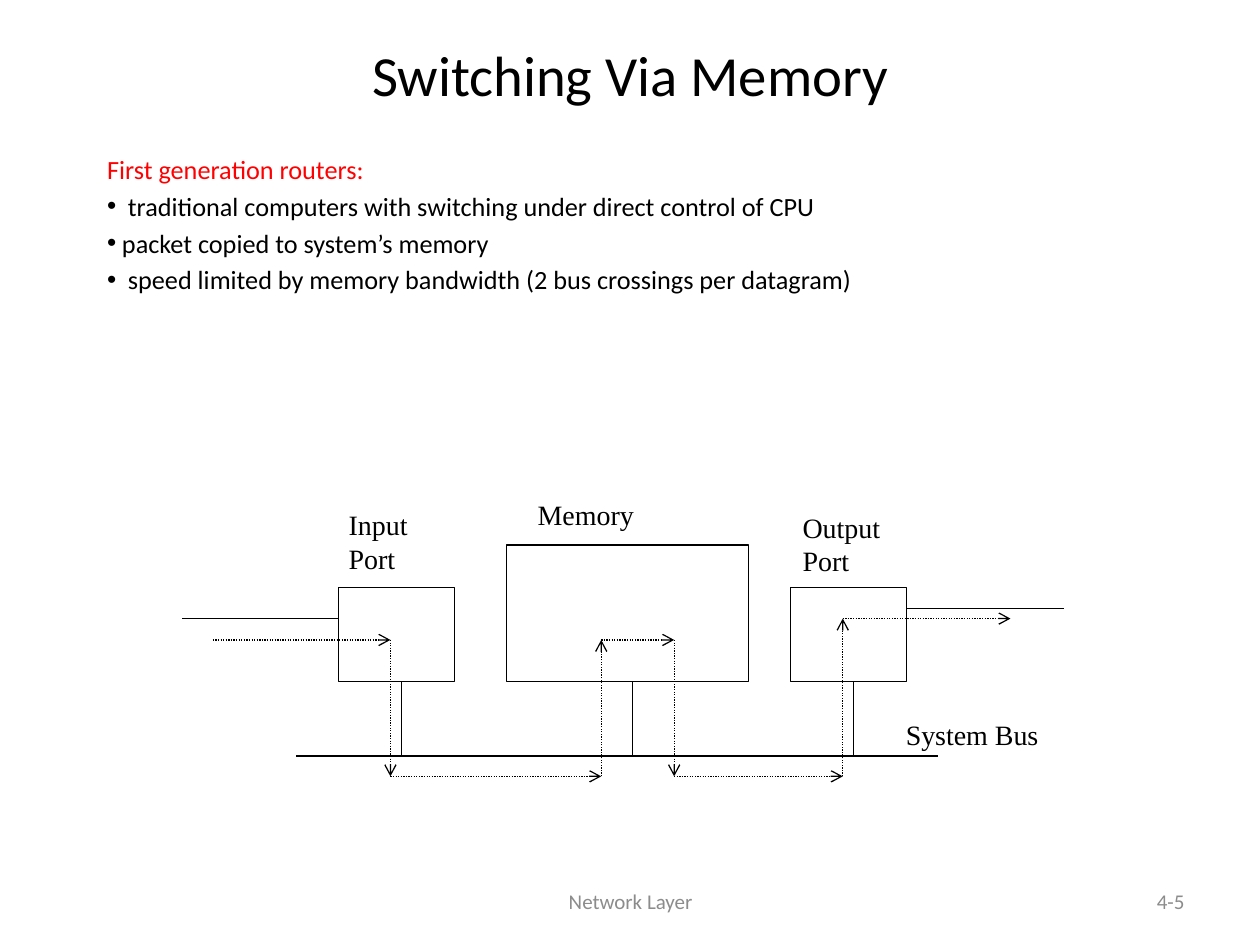
import itertools

import pptx
import pptx.dml.color
import pptx.enum.dml
import pptx.enum.shapes
import pptx.enum.text
import pptx.oxml.ns
import pptx.util
from lxml import etree

Cm = pptx.util.Cm
Pt = pptx.util.Pt
RGBColor = pptx.dml.color.RGBColor
Align = pptx.enum.text.PP_ALIGN
Anchor = pptx.enum.text.MSO_ANCHOR

BLACK = RGBColor(0x00, 0x00, 0x00)
RED = RGBColor(0xFF, 0x00, 0x00)
GREY = RGBColor(0x8C, 0x8C, 0x8C)
SANS = "Calibri"
SERIF = "Times New Roman"

BOX_BOTTOM = 13.74
BUS_Y = 15.24
PORT_WIDTH, PORT_HEIGHT = 2.34, 1.9
INPUT_LEFT, OUTPUT_LEFT = 6.83, 15.93
MEMORY_LEFT, MEMORY_WIDTH, MEMORY_HEIGHT = 10.21, 4.88, 2.75

POINTS = [
    " traditional computers with switching under direct control of CPU",
    "packet copied to system’s memory",
    " speed limited by memory bandwidth (2 bus crossings per datagram)",
]
LABELS = [
    (["Input", "Port"], 6.78, 10.11, 1.7, 1.63),
    (["Output", "Port"], 15.93, 10.16, 2.08, 1.63),
    (["Memory"], 10.59, 9.91, 2.46, 0.94),
    (["System Bus"], 18.01, 14.35, 3.2, 0.94),
]
PACKET_ROUTE = [
    (4.29, 12.9), (7.87, 12.9), (7.87, 15.65), (12.12, 15.65), (12.12, 12.9),
    (13.59, 12.9), (13.59, 15.65), (16.99, 15.65), (16.99, 12.47), (20.37, 12.47),
]


def add_frame(page, left, top, width, height, anchor=Anchor.TOP, wrap=True):
    box = page.shapes.add_textbox(Cm(left), Cm(top), Cm(width), Cm(height))
    frame = box.text_frame
    frame.word_wrap = wrap
    frame.vertical_anchor = anchor
    return frame


def add_span(para, text, size, font, color):
    span = para.add_run()
    span.text = text
    span.font.size = Pt(size)
    span.font.name = font
    span.font.color.rgb = color


def add_line_of_text(page, text, place, size, color, align):
    para = add_frame(page, *place, anchor=Anchor.MIDDLE).paragraphs[0]
    para.alignment = align
    add_span(para, text, size, SANS, color)


def add_bullet(para):
    """Give the paragraph a hanging bullet."""
    properties = para._p.get_or_add_pPr()
    properties.set("marL", str(Cm(0.3)))
    properties.set("indent", str(-Cm(0.3)))
    font = etree.SubElement(properties, pptx.oxml.ns.qn("a:buFont"))
    font.set("typeface", "Arial")
    mark = etree.SubElement(properties, pptx.oxml.ns.qn("a:buChar"))
    mark.set("char", "•")


def add_body(page):
    frame = add_frame(page, 1.91, 2.97, 21.79, 2.97)
    add_span(frame.paragraphs[0], "First generation routers:", 15, SANS, RED)
    for point in POINTS:
        para = frame.add_paragraph()
        para.space_before = Pt(3)
        add_bullet(para)
        add_span(para, point, 15, SANS, BLACK)


def add_label(page, lines, *place):
    frame = add_frame(page, *place, wrap=False)
    frame.auto_size = pptx.enum.text.MSO_AUTO_SIZE.SHAPE_TO_FIT_TEXT
    for index, text in enumerate(lines):
        para = frame.add_paragraph() if index else frame.paragraphs[0]
        add_span(para, text, 16, SERIF, BLACK)


def add_unit(page, left, width, height):
    """Draw a box that stands on the common lower edge."""
    box = page.shapes.add_shape(
        pptx.enum.shapes.MSO_SHAPE.RECTANGLE,
        Cm(left), Cm(BOX_BOTTOM - height), Cm(width), Cm(height))
    box.shadow.inherit = False
    box.fill.background()
    box.line.color.rgb = BLACK
    box.line.width = Pt(0.75)


def add_line(page, start, end):
    line = page.shapes.add_connector(
        pptx.enum.shapes.MSO_CONNECTOR.STRAIGHT,
        Cm(start[0]), Cm(start[1]), Cm(end[0]), Cm(end[1]))
    line.line.color.rgb = BLACK
    line.line.width = Pt(0.75)
    etree.SubElement(line._element.spPr, pptx.oxml.ns.qn("a:effectLst"))
    return line


def add_packet_arrow(page, start, end):
    arrow = add_line(page, start, end)
    arrow.line.dash_style = pptx.enum.dml.MSO_LINE.ROUND_DOT
    tail = etree.SubElement(arrow.line._get_or_add_ln(), pptx.oxml.ns.qn("a:tailEnd"))
    tail.set("type", "arrow")


def add_diagram(page):
    add_unit(page, INPUT_LEFT, PORT_WIDTH, PORT_HEIGHT)
    add_unit(page, OUTPUT_LEFT, PORT_WIDTH, PORT_HEIGHT)
    add_unit(page, MEMORY_LEFT, MEMORY_WIDTH, MEMORY_HEIGHT)
    add_line(page, (5.97, BUS_Y), (18.9, BUS_Y))
    for x in (8.1, 12.75, 17.2):
        add_line(page, (x, BOX_BOTTOM), (x, BUS_Y))
    add_line(page, (INPUT_LEFT, 12.47), (3.66, 12.47))
    add_line(page, (21.44, 12.27), (OUTPUT_LEFT + PORT_WIDTH, 12.27))
    for start, end in itertools.pairwise(PACKET_ROUTE):
        add_packet_arrow(page, start, end)
    for label in LABELS:
        add_label(page, *label)


def main():
    deck = pptx.Presentation()
    deck.slide_width = Cm(25.4)
    deck.slide_height = Cm(19.05)
    page = deck.slides.add_slide(deck.slide_layouts[6])
    add_line_of_text(page, "Network Layer", (8.69, 17.65, 8.05, 1.02), 12, GREY, Align.CENTER)
    add_line_of_text(page, "4-5", (18.21, 17.65, 5.92, 1.02), 12, GREY, Align.RIGHT)
    add_line_of_text(page, "Switching Via Memory", (1.91, 0.64, 21.59, 1.7), 32.4, BLACK,
                     Align.CENTER)
    add_body(page)
    add_diagram(page)
    deck.save("out.pptx")


if __name__ == "__main__":
    main()
